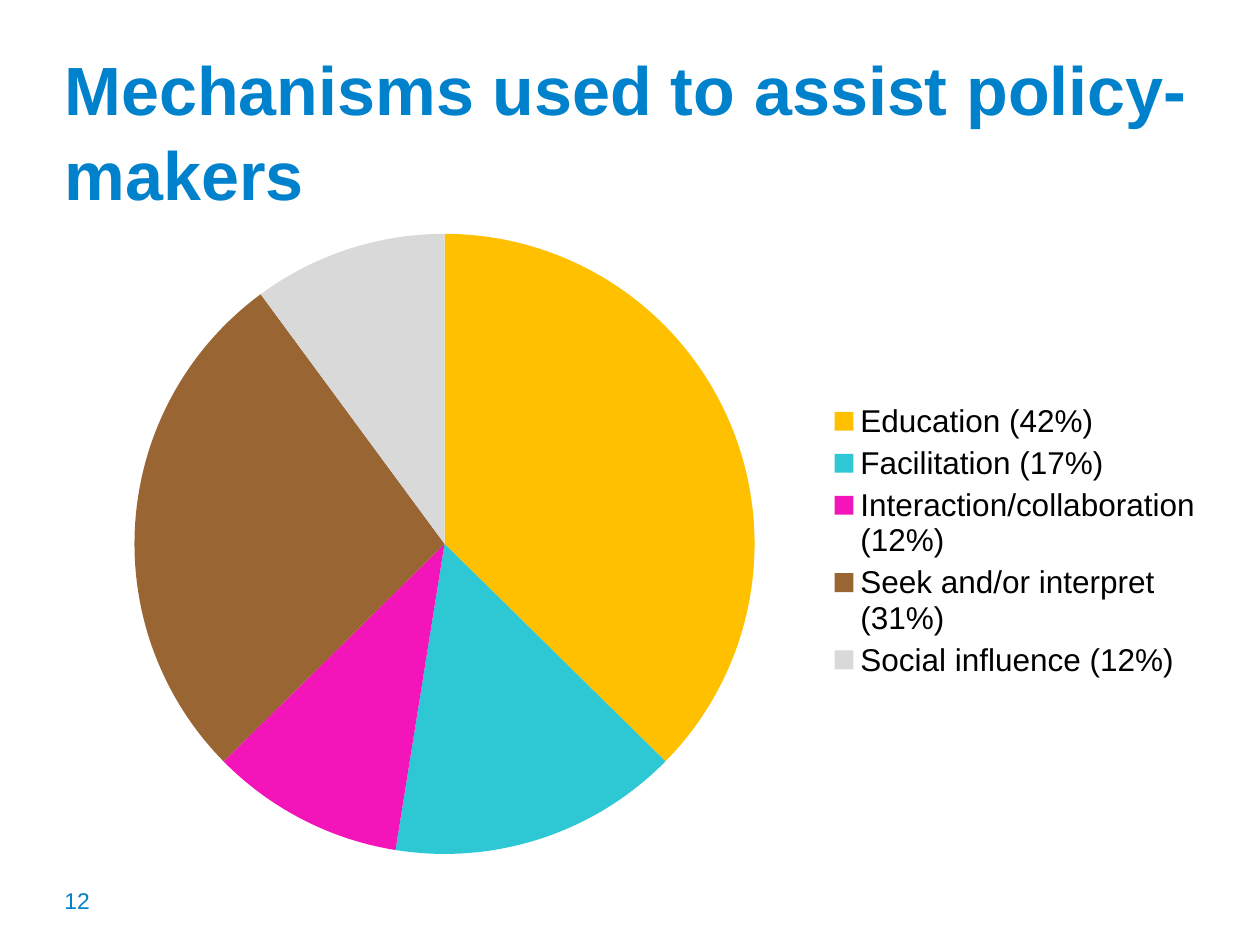
from lxml.etree import SubElement
from pptx import Presentation
from pptx.chart.data import CategoryChartData
from pptx.dml.color import RGBColor
from pptx.enum.chart import XL_CHART_TYPE, XL_LEGEND_POSITION
from pptx.enum.text import MSO_ANCHOR, PP_ALIGN
from pptx.oxml.ns import qn
from pptx.util import Cm, Pt

BLUE = "0081CB"
LEFT, WIDTH = Cm(1.3), Cm(23.22)
SLICES = [
    ("Education (42%)", 37, "FFC000"),
    ("Facilitation (17%)", 15, "2EC8D5"),
    ("Interaction/collaboration (12%)", 10, "F315B9"),
    ("Seek and/or interpret (31%)", 27, "996633"),
    ("Social influence (12%)", 10, "D9D9D9"),
]


def write(shape, text, size, color=BLUE, bold=False, spacing=1.0):
    tf = shape.text_frame
    tf.word_wrap = True
    tf.vertical_anchor = MSO_ANCHOR.TOP
    tf.margin_left = tf.margin_right = tf.margin_top = tf.margin_bottom = 0
    p = tf.paragraphs[0]
    p.alignment = PP_ALIGN.LEFT
    p.line_spacing = spacing
    r = p.add_run()
    r.text = text
    r.font.name, r.font.size, r.font.bold = "Arial", Pt(size), bold
    r.font.color.rgb = RGBColor.from_string(color)


def place(layout, **values):
    """Fix a chart part at fractions of the chart area."""
    for old in list(layout):
        layout.remove(old)
    manual = SubElement(layout, qn("c:manualLayout"))
    for tag, value in values.items():
        SubElement(manual, qn(f"c:{tag}")).set("val", str(value))


prs = Presentation()
prs.slide_width, prs.slide_height = Cm(25.4), Cm(19.05)
s = prs.slides.add_slide(prs.slide_layouts[5])

title = s.shapes.title
title.left, title.top, title.width, title.height = LEFT, Cm(0.91), WIDTH, Cm(2.57)
write(title, "Mechanisms used to assist policy-makers", 39, bold=True, spacing=1.03)

data = CategoryChartData()
data.categories = [name for name, _, _ in SLICES]
data.add_series("Series 1", [value for _, value, _ in SLICES])
chart = s.shapes.add_chart(
    XL_CHART_TYPE.PIE, LEFT, Cm(4.32), WIDTH, Cm(13.16), data).chart
chart.has_title = False
chart.font.name, chart.font.size = "Arial", Pt(18)
chart.font.color.rgb = RGBColor.from_string("000000")

plot = chart.plots[0]
plot.vary_by_categories = True
for i, (_, _, color) in enumerate(SLICES):
    fmt = plot.series[0].points[i].format
    fmt.fill.solid()
    fmt.fill.fore_color.rgb = RGBColor.from_string(color)
    fmt.line.fill.background()

chart.has_legend = True
legend = chart.legend
legend.position = XL_LEGEND_POSITION.RIGHT
legend.include_in_layout = False

area = chart.element.find(".//" + qn("c:plotArea"))
area_layout = area.find(qn("c:layout"))
if area_layout is None:
    area_layout = SubElement(area, qn("c:layout"))
    area.insert(0, area_layout)
place(area_layout, layoutTarget="inner", xMode="edge", yMode="edge",
      x=0.06, y=0.03, w=0.54, h=0.95)

legend_box = chart.element.find(".//" + qn("c:legend"))
legend_layout = legend_box.find(qn("c:layout"))
if legend_layout is None:
    legend_layout = SubElement(legend_box, qn("c:layout"))
    legend_box.find(qn("c:legendPos")).addnext(legend_layout)
place(legend_layout, xMode="edge", yMode="edge", x=0.66, y=0.28, w=0.33, h=0.44)

number = s.shapes.add_textbox(LEFT, Cm(17.88), Cm(0.81), Cm(0.81))
write(number, "12", 13)

prs.save("out.pptx")
